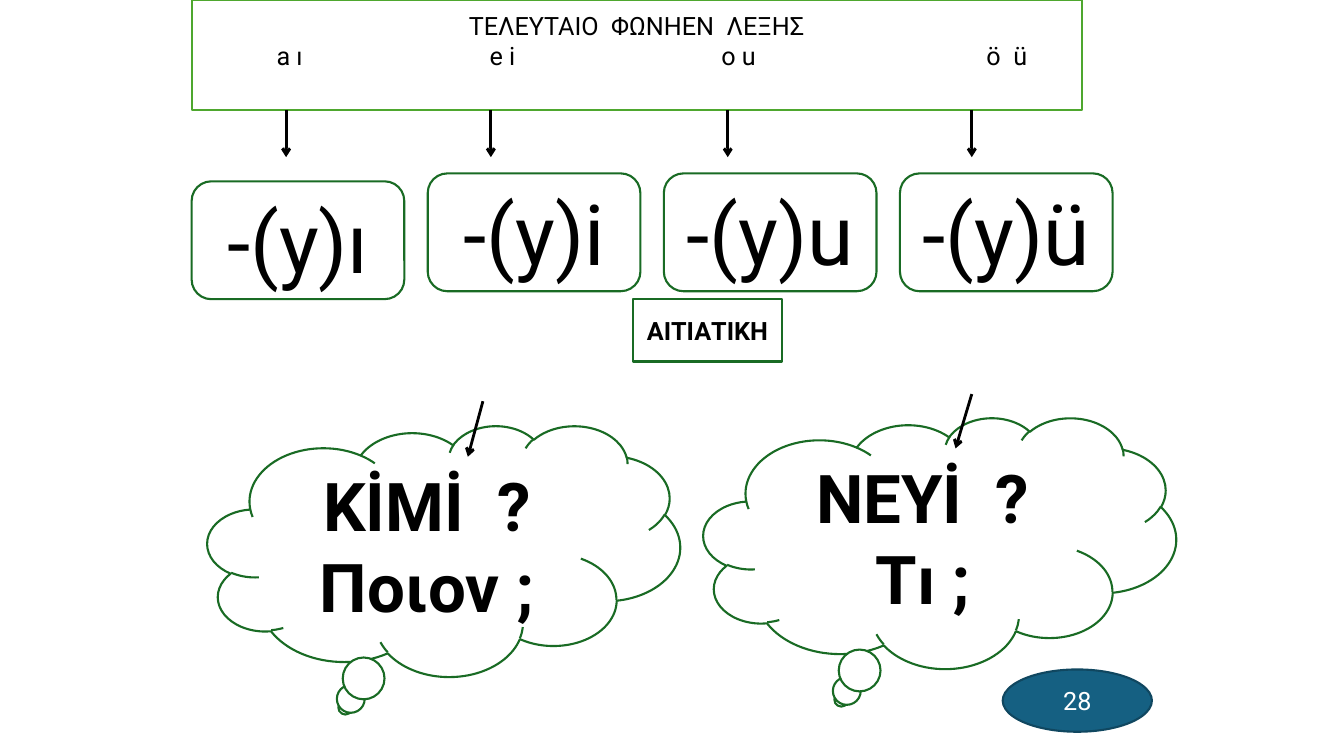
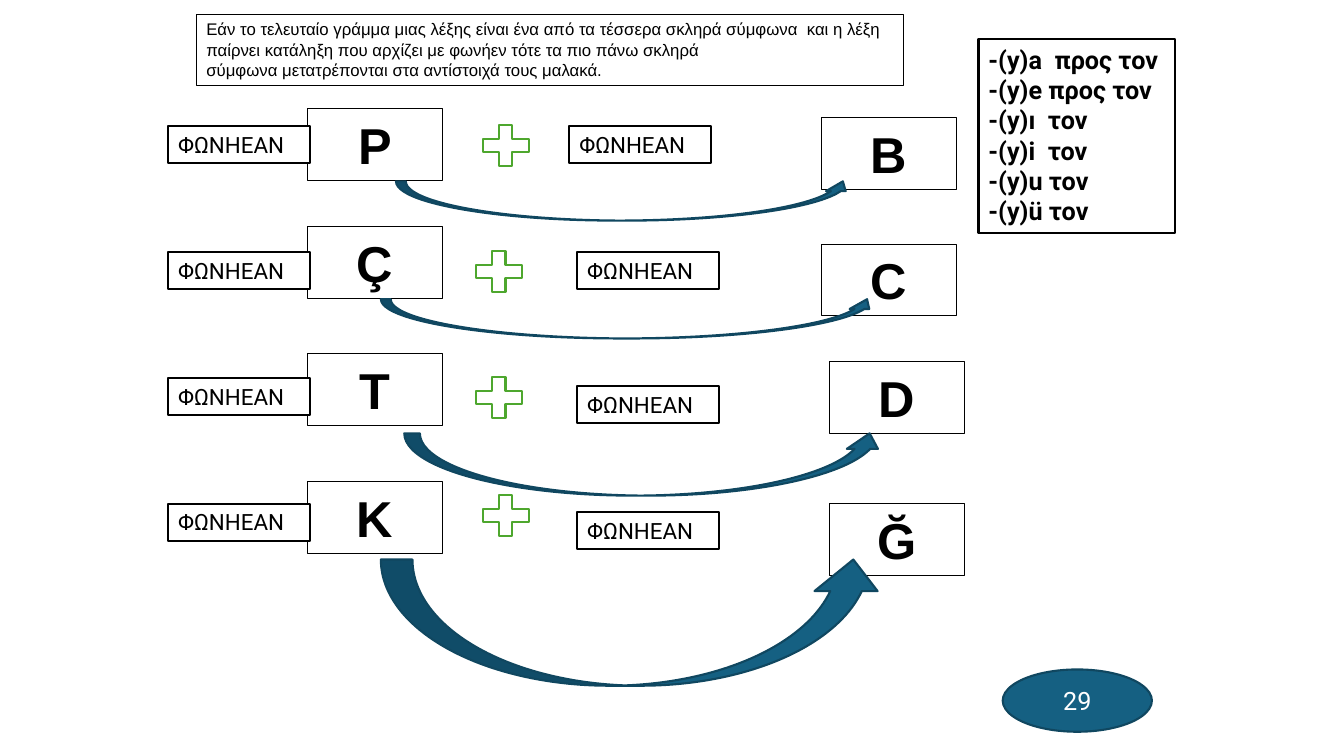
from dataclasses import dataclass
from typing import NamedTuple

from lxml.etree import SubElement
from pptx import Presentation
from pptx.dml.color import RGBColor
from pptx.enum.shapes import MSO_CONNECTOR, MSO_SHAPE
from pptx.enum.text import MSO_ANCHOR, MSO_AUTO_SIZE, PP_ALIGN
from pptx.oxml.ns import qn
from pptx.shapes.autoshape import Shape
from pptx.slide import Slide
from pptx.util import Cm, Pt

BLACK, WHITE = "000000", "FFFFFF"
DARK_GREEN, LIGHT_GREEN = "196B24", "4EA72E"
BLUE, DARK_BLUE = "156082", "104760"


class Area(NamedTuple):
    """Left, top, width and height in centimetres."""
    left: float
    top: float
    width: float
    height: float


class Point(NamedTuple):
    left: float
    top: float


@dataclass(frozen=True)
class BoxStyle:
    line: str
    line_width: float = 1.5
    fill: str | None = WHITE
    preset: MSO_SHAPE = MSO_SHAPE.RECTANGLE


@dataclass(frozen=True)
class TextStyle:
    size: float
    bold: bool = False
    color: str = BLACK
    font: str = "Roboto"
    align: PP_ALIGN = PP_ALIGN.CENTER
    anchor: MSO_ANCHOR = MSO_ANCHOR.MIDDLE
    grow: bool = False


@dataclass(frozen=True)
class Cloud:
    corner: Point
    lines: tuple[str, ...]
    arrow_start: Point
    arrow_end: Point


@dataclass(frozen=True)
class Mutation:
    """A hard consonant that softens between two vowels."""
    hard: str
    hard_top: float
    soft: str
    soft_corner: Point
    plus_corner: Point
    vowel_corner: Point
    curve: Area


HEADER_BOX = BoxStyle(LIGHT_GREEN)
GREEN_BOX = BoxStyle(DARK_GREEN)
ENDING_BOX = BoxStyle(DARK_GREEN, preset=MSO_SHAPE.ROUNDED_RECTANGLE)
CLOUD_BOX = BoxStyle(DARK_GREEN, preset=MSO_SHAPE.CLOUD_CALLOUT)
PAGE_OVAL = BoxStyle(DARK_BLUE, fill=BLUE, preset=MSO_SHAPE.OVAL)
CURVED_ARROW = BoxStyle(DARK_BLUE, fill=BLUE, preset=MSO_SHAPE.CURVED_UP_ARROW)
PLUS_SIGN = BoxStyle(LIGHT_GREEN, preset=MSO_SHAPE.MATH_PLUS)
THIN_BOX = BoxStyle(BLACK, line_width=0.75, fill=None)
BLACK_BOX = BoxStyle(BLACK)

ENDING_TEXT = TextStyle(60)
CLOUD_TEXT = TextStyle(48, bold=True)
CASE_TEXT = TextStyle(18, bold=True)
HEADER_TEXT = TextStyle(18, anchor=MSO_ANCHOR.TOP)
PAGE_TEXT = TextStyle(18, color=WHITE)
LETTER_TEXT = TextStyle(36, bold=True, font="Arial", anchor=MSO_ANCHOR.TOP, grow=True)
NOTE_TEXT = TextStyle(12, font="Arial", align=PP_ALIGN.LEFT, anchor=MSO_ANCHOR.TOP, grow=True)
VOWEL_TEXT = TextStyle(16, align=PP_ALIGN.LEFT, anchor=MSO_ANCHOR.TOP, grow=True)
LIST_TEXT = TextStyle(18, bold=True, align=PP_ALIGN.LEFT, anchor=MSO_ANCHOR.TOP, grow=True)

PAGE_AREA = Area(25.27, 16.87, 3.76, 1.57)
ENDING_LEFT, ENDING_PITCH = 4.83, 5.95
VOWEL = "ΦΩΝΗΕΑΝ"
VOWEL_LEFT, VOWEL_TOP, VOWEL_PITCH = 4.24, 3.18, 3.17
VOWEL_SIZE = (3.58, 0.94)
HARD_LEFT = 7.75
LETTER_SIZE = (3.4, 1.8)
PLUS_SIZE = (1.57, 1.4)
CLOUD_SIZE = (11.91, 6.32)

VOWEL_TABS = (1.89, 7.26, 13.1, 19.78)
ARROW_LEFTS = (7.21, 12.37, 18.34, 24.49)
ENDINGS = (("-(y)ı", 4.57), ("-(y)i", 4.37), ("-(y)u", 4.37), ("-(y)ü", 4.37))
CLOUDS = (
    Cloud(Point(5.23, 10.72), ("KİMİ  ?", "Ποιον ;"), Point(12.17, 10.11), Point(11.79, 11.51)),
    Cloud(Point(17.73, 10.52), ("NEYİ  ?", "Tı ;"), Point(24.49, 9.93), Point(24.08, 11.3)),
)
MUTATIONS = (
    Mutation("P", 2.74, "B", Point(20.7, 2.97), Point(11.96, 2.97),
             Point(14.35, 3.18), Area(9.98, 4.57, 11.51, 0.99)),
    Mutation("Ç", 5.72, "C", Point(20.7, 6.15), Point(11.79, 6.15),
             Point(14.55, 6.35), Area(9.6, 7.54, 12.5, 0.99)),
    Mutation("T", 8.92, "D", Point(20.9, 9.12), Point(11.79, 9.32),
             Point(14.55, 9.73), Area(10.19, 10.92, 12.12, 1.57)),
    Mutation("K", 12.14, "Ğ", Point(20.9, 12.7), Point(11.96, 12.29),
             Point(14.55, 12.9), Area(9.6, 14.1, 12.7, 3.18)),
)
NOTE = (
    "Εάν το τελευταίο γράμμα μιας λέξης είναι ένα από τα τέσσερα σκληρά σύμφωνα  και η λέξη "
    "παίρνει κατάληξη που αρχίζει με φωνήεν τότε τα πιο πάνω σκληρά",
    "σύμφωνα μετατρέπονται στα αντίστοιχά τους μαλακά.",
)
CASE_LIST = ("-(y)a  προς τον", "-(y)e προς τον", "-(y)ı  τον",
             "-(y)i  τον", "-(y)u τον", "-(y)ü τον")


def rgb(color: str) -> RGBColor:
    return RGBColor.from_string(color)


def add_box(slide: Slide, area: Area, style: BoxStyle) -> Shape:
    box = slide.shapes.add_shape(style.preset, *(Cm(length) for length in area))
    box.shadow.inherit = False
    if style.fill is None:
        box.fill.background()
    else:
        box.fill.solid()
        box.fill.fore_color.rgb = rgb(style.fill)
    box.line.color.rgb = rgb(style.line)
    box.line.width = Pt(style.line_width)
    return box


def write(box: Shape, lines: tuple[str, ...], style: TextStyle) -> None:
    frame = box.text_frame
    frame.text = "\n".join(lines)
    frame.word_wrap = True
    frame.vertical_anchor = style.anchor
    if style.grow:
        frame.auto_size = MSO_AUTO_SIZE.SHAPE_TO_FIT_TEXT
    for para in frame.paragraphs:
        para.alignment = style.align
        for span in para.runs:
            span.font.name = style.font
            span.font.size = Pt(style.size)
            span.font.bold = style.bold
            span.font.color.rgb = rgb(style.color)


def add_text_box(slide: Slide, area: Area, look: BoxStyle,
                 lines: tuple[str, ...], style: TextStyle) -> Shape:
    box = add_box(slide, area, look)
    write(box, lines, style)
    return box


def add_arrow(slide: Slide, start: Point, end: Point) -> None:
    arrow = slide.shapes.add_connector(
        MSO_CONNECTOR.STRAIGHT, *(Cm(length) for length in (*start, *end)))
    arrow.line.color.rgb = rgb(BLACK)
    arrow.line.width = Pt(2)
    properties = arrow.element.spPr
    SubElement(properties.find(qn("a:ln")), qn("a:tailEnd"), type="arrow")
    SubElement(properties, qn("a:effectLst"))


def add_page_number(slide: Slide, number: int) -> None:
    add_text_box(slide, PAGE_AREA, PAGE_OVAL, (str(number),), PAGE_TEXT)


def add_vowel_header(slide: Slide) -> None:
    """Title above the vowel pairs, which stand on tab stops."""
    vowels = "\t" + "\t".join(("a ı", "e i", "o u", "ö  ü"))
    header = add_text_box(slide, Area(ENDING_LEFT, 0, 22.43, 2.77), HEADER_BOX,
                          ("ΤΕΛΕΥΤΑΙΟ  ΦΩΝΗΕΝ  ΛΕΞΗΣ", vowels), HEADER_TEXT)
    header.text_frame.margin_top = Cm(0.25)
    vowel_row = header.text_frame.paragraphs[1]
    vowel_row.alignment = PP_ALIGN.LEFT
    tab_list = SubElement(vowel_row._p.get_or_add_pPr(), qn("a:tabLst"))
    for position in VOWEL_TABS:
        SubElement(tab_list, qn("a:tab"), pos=str(int(Cm(position))), algn="l")


def build_accusative(slide: Slide) -> None:
    add_vowel_header(slide)
    for left in ARROW_LEFTS:
        add_arrow(slide, Point(left, 2.77), Point(left, 3.96))
    for column, (ending, top) in enumerate(ENDINGS):
        area = Area(ENDING_LEFT + column * ENDING_PITCH, top, 5.36, 2.97)
        add_text_box(slide, area, ENDING_BOX, (ending,), ENDING_TEXT)
    add_text_box(slide, Area(15.95, 7.54, 3.76, 1.57), GREEN_BOX, ("ΑΙΤΙΑΤΙΚΗ",), CASE_TEXT)
    for cloud in CLOUDS:
        add_text_box(slide, Area(*cloud.corner, *CLOUD_SIZE), CLOUD_BOX, cloud.lines, CLOUD_TEXT)
        add_arrow(slide, cloud.arrow_start, cloud.arrow_end)
    add_page_number(slide, 28)


def add_mutation(slide: Slide, row: int, mutation: Mutation) -> None:
    letters = ((mutation.hard, Point(HARD_LEFT, mutation.hard_top)),
               (mutation.soft, mutation.soft_corner))
    for letter, corner in letters:
        add_text_box(slide, Area(*corner, *LETTER_SIZE), THIN_BOX, (letter,), LETTER_TEXT)
    first_vowel = Point(VOWEL_LEFT, VOWEL_TOP + row * VOWEL_PITCH)
    for corner in (first_vowel, mutation.vowel_corner):
        add_text_box(slide, Area(*corner, *VOWEL_SIZE), BLACK_BOX, (VOWEL,), VOWEL_TEXT)
    add_box(slide, Area(*mutation.plus_corner, *PLUS_SIZE), PLUS_SIGN)
    add_box(slide, mutation.curve, CURVED_ARROW)


def build_mutations(slide: Slide) -> None:
    add_text_box(slide, Area(4.95, 0.36, 17.81, 1.8), THIN_BOX, NOTE, NOTE_TEXT)
    for row, mutation in enumerate(MUTATIONS):
        add_mutation(slide, row, mutation)
    add_text_box(slide, Area(24.66, 0.99, 4.95, 4.88), BLACK_BOX, CASE_LIST, LIST_TEXT)
    add_page_number(slide, 29)


def main() -> None:
    deck = Presentation()
    deck.slide_width, deck.slide_height = Cm(33.87), Cm(19.05)
    blank = deck.slide_layouts[6]
    for build in (build_accusative, build_mutations):
        build(deck.slides.add_slide(blank))
    deck.save("out.pptx")


if __name__ == "__main__":
    main()
